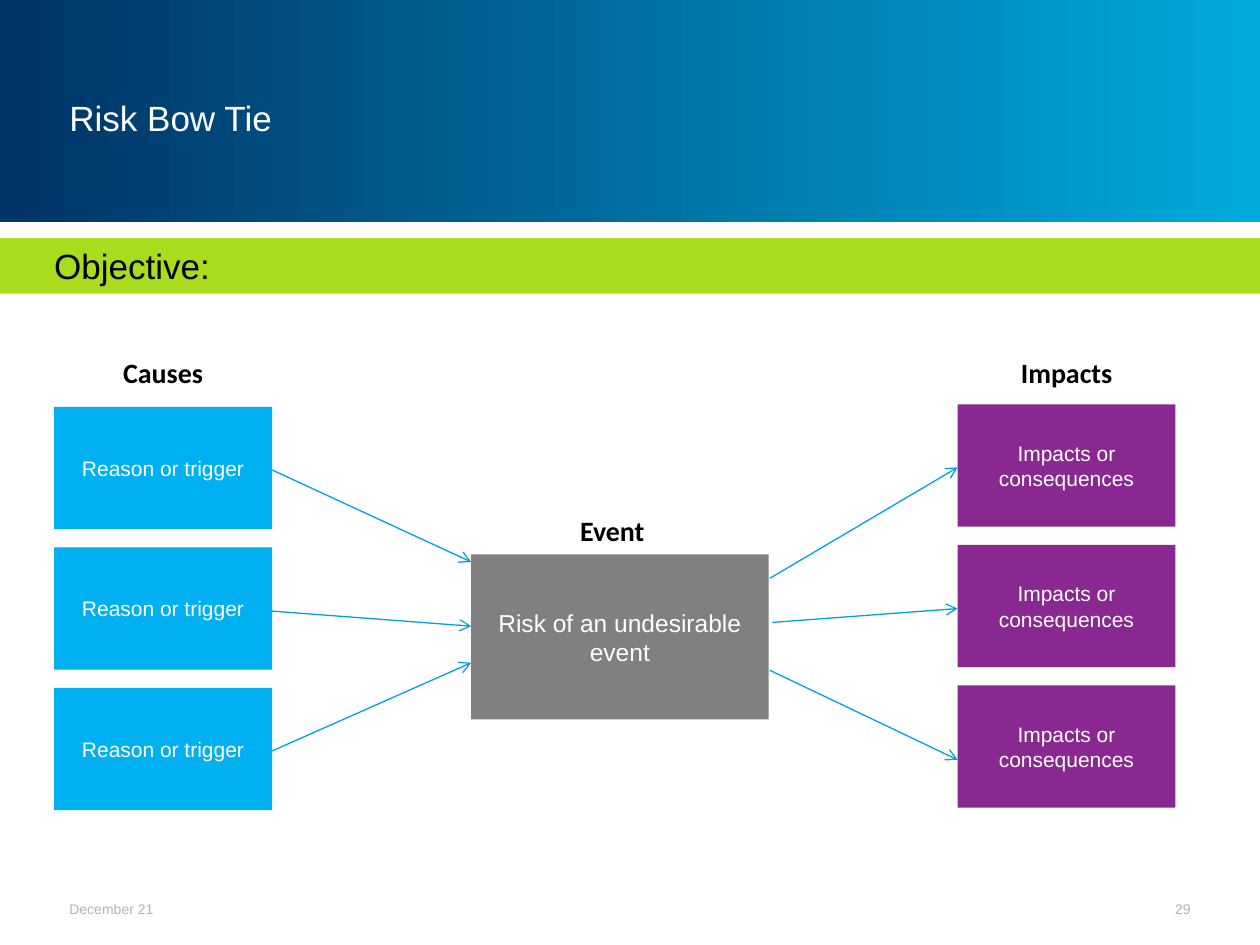
from dataclasses import dataclass
from lxml.etree import SubElement
from pptx import Presentation
from pptx.dml.color import RGBColor
from pptx.enum.shapes import MSO_CONNECTOR, MSO_SHAPE
from pptx.enum.text import MSO_ANCHOR, MSO_AUTO_SIZE, PP_ALIGN
from pptx.oxml.ns import qn
from pptx.util import Inches, Pt

# The slide is a grid of 100 columns and 75 rows.
COLS, ROWS = 100, 75
STEP = 11.15  # rows from one stacked box to the next
BOX_W, BOX_H = 17.3, 9.7
BLUE, PURPLE, GRAY, LIME = "00B0F0", "892890", "808080", "AADC1E"
WHITE, BLACK, PALE, LINE = "FFFFFF", "000000", "B4B4B4", "00A0DF"


@dataclass
class Area:
    col: float
    row: float
    wide: float
    high: float


@dataclass
class Style:
    size: float
    color: str = WHITE
    name: str = "Arial"
    bold: bool = False
    align: PP_ALIGN = PP_ALIGN.CENTER
    anchor: MSO_ANCHOR = MSO_ANCHOR.MIDDLE
    pad: tuple = (1, 0.8, 1, 0.8)


@dataclass
class Side:
    head: str
    label: Area
    text: str
    fill: str
    col: float
    row: float
    arrows: list


HEAD = Style(16, BLACK, "Calibri", True, anchor=MSO_ANCHOR.TOP, pad=(1, 0.5, 1, 0.5))
FOOT = Style(8, PALE, align=PP_ALIGN.LEFT, pad=(0.4,) * 4)
PAGE = Style(8, PALE, align=PP_ALIGN.RIGHT, pad=(0.4,) * 4)
TITLE = Style(20, align=PP_ALIGN.LEFT, pad=(0.4,) * 4)
GOAL = Style(20, BLACK, align=PP_ALIGN.LEFT, anchor=MSO_ANCHOR.TOP, pad=(4.3, 0.5, 1, 0.5))
ITEM = Style(12)
EVENT = Style(14, pad=(0,) * 4)

# Each arrow runs from column, row to column, row.
SIDES = [
    Side("Impacts", Area(77.7, 27.7, 13.9, 3.7), "Impacts or consequences", PURPLE, 76, 32.1,
         [(61.1, 45.9, 76, 37.1), (61.3, 49.4, 76, 48.3), (61.1, 53.2, 76, 60.3)]),
    Side("Causes", Area(6.3, 27.7, 13.3, 3.7), "Reason or trigger", BLUE, 4.3, 32.3,
         [(21.6, 37.3, 37.4, 44.6), (21.6, 48.5, 37.4, 49.7), (21.6, 59.6, 37.4, 52.6)]),
]

deck = Presentation()
deck.slide_width, deck.slide_height = Inches(10), Inches(7.5)
slide = deck.slides.add_slide(deck.slide_layouts[5])
shapes = slide.shapes


def across(cols: float) -> int:
    return round(deck.slide_width * cols / COLS)


def down(rows: float) -> int:
    return round(deck.slide_height * rows / ROWS)


def place(area: Area) -> tuple:
    return across(area.col), down(area.row), across(area.wide), down(area.high)


def tint(code: str) -> RGBColor:
    return RGBColor.from_string(code)


def put(target, values: dict) -> None:
    for key, value in values.items():
        setattr(target, key, value)


def write(shape, text: str, style: Style) -> None:
    frame = shape.text_frame
    frame.text = text
    left, top, right, base = style.pad
    put(frame, {"word_wrap": True, "auto_size": MSO_AUTO_SIZE.NONE,
                "vertical_anchor": style.anchor,
                "margin_left": across(left), "margin_right": across(right),
                "margin_top": down(top), "margin_bottom": down(base)})
    para = frame.paragraphs[0]
    put(para, {"alignment": style.align, "space_before": Pt(0)})
    font = para.runs[0].font
    put(font, {"size": Pt(style.size), "name": style.name, "bold": style.bold})
    font.color.rgb = tint(style.color)


def label(text: str, area: Area, style: Style) -> None:
    write(shapes.add_textbox(*place(area)), text, style)


def block(area: Area):
    shape = shapes.add_shape(MSO_SHAPE.RECTANGLE, *place(area))
    shape.shadow.inherit = False
    shape.line.fill.background()
    return shape


def card(text: str, area: Area, fill: str, style: Style) -> None:
    shape = block(area)
    shape.fill.solid()
    shape.fill.fore_color.rgb = tint(fill)
    write(shape, text, style)


def arrow(col: float, row: float, end_col: float, end_row: float) -> None:
    line = shapes.add_connector(MSO_CONNECTOR.STRAIGHT, across(col), down(row),
                                across(end_col), down(end_row))
    line.line.color.rgb = tint(LINE)
    line.line.width = Pt(0.75)
    SubElement(line.line._get_or_add_ln(), qn("a:tailEnd"), type="arrow")
    SubElement(line._element.spPr, qn("a:effectLst"))


def banner() -> None:
    """Draw the gradient band and set the title in front of it."""
    band = block(Area(0, 0, COLS, 17.6))
    band.fill.gradient()
    band.fill.gradient_angle = 0
    for stop, share, code in zip(band.fill.gradient_stops, (0, 1), ("003366", "00AADC")):
        stop.position = share
        stop.color.rgb = tint(code)
    title = shapes.title
    title._element.addprevious(band._element)
    left, top, wide, high = place(Area(5.1, 3, 74.8, 12.6))
    put(title, {"left": left, "top": top, "width": wide, "height": high})
    write(title, "Risk Bow Tie", TITLE)


def main() -> None:
    banner()
    for side in SIDES:
        for ends in side.arrows:
            arrow(*ends)
        label(side.head, side.label, HEAD)
        for i in range(3):
            area = Area(side.col, side.row + i * STEP, BOX_W, BOX_H)
            card(side.text, area, side.fill, ITEM)
    card("Risk of an undesirable event", Area(37.4, 44, 23.6, 13.1), GRAY, EVENT)
    label("Event", Area(43.3, 40.3, 10.6, 3.7), HEAD)
    card("Objective:", Area(0, 18.9, COLS, 4.4), LIME, GOAL)
    label("December 21", Area(5.1, 70.9, 15.7, 2.4), FOOT)
    label("29", Area(87, 70.9, 7.9, 2.4), PAGE)
    deck.save("out.pptx")


if __name__ == "__main__":
    main()
